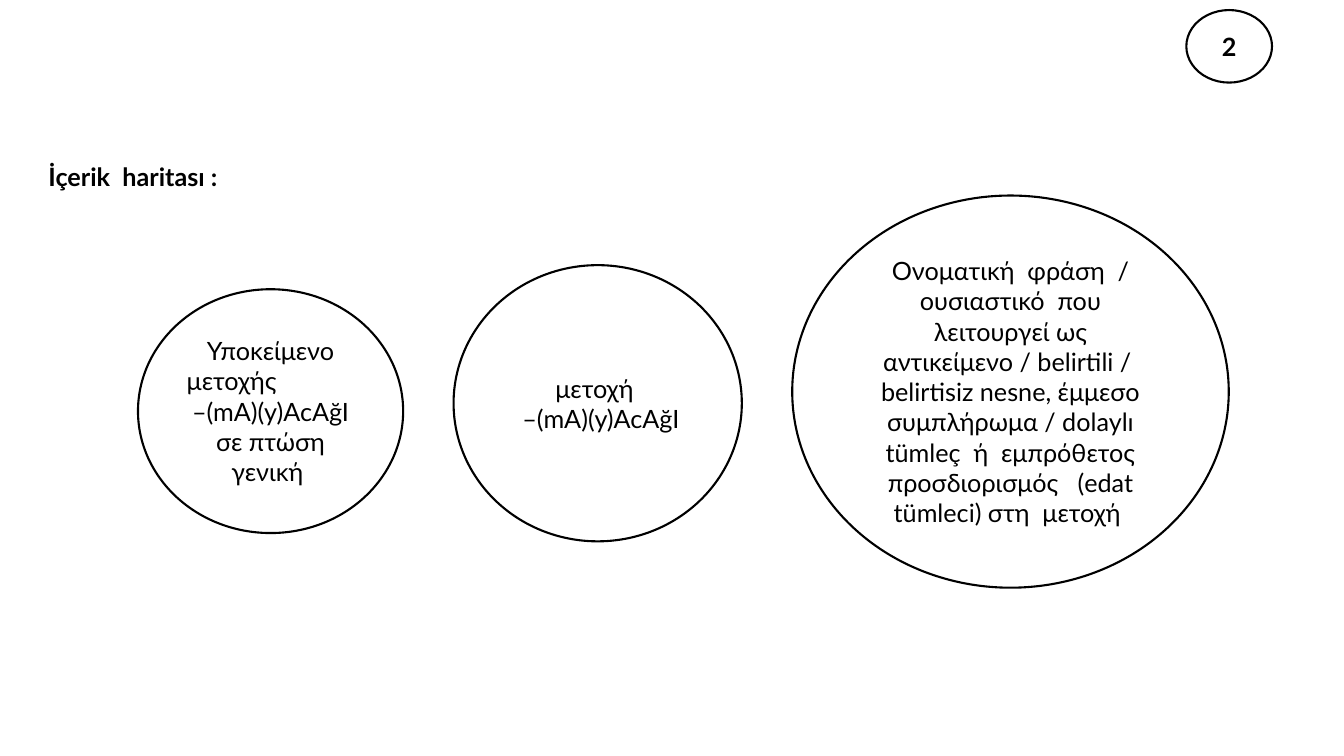
"""Build the content map slide: a heading, a numbered badge and a row of three ellipses."""
import pptx
import pptx.dml.color
import pptx.enum.shapes
import pptx.enum.text
import pptx.util

Pt = pptx.util.Pt
ALIGN = pptx.enum.text.PP_ALIGN
ANCHOR = pptx.enum.text.MSO_ANCHOR

SLIDE_SIZE = (960, 540)
BLACK, WHITE = "000000", "FFFFFF"
HEADING = "İçerik  haritası :"
HEADING_BOX = (27.4, 111.6, 734.4, 28.8)
BADGE = "2"
BADGE_BOX = (847.4, 7.2, 61.2, 51.8)
ROW_LEFT, ROW_GAP = 98.6, 36
ELLIPSES = [
    {"top": 206.6, "size": (189.4, 174.2), "lines": [
        ("Υποκείμενο", ALIGN.CENTER),
        ("μετοχής", ALIGN.LEFT),
        ("–(mA)(y)AcAğI σε πτώση γενική ", ALIGN.CENTER)]},
    {"top": 189.4, "size": (205.9, 197.3), "lines": [
        ("μετοχή ", ALIGN.CENTER),
        (" –(mA)(y)AcAğI", ALIGN.CENTER)]},
    {"top": 139.7, "size": (311.8, 280.1), "lines": [
        ("Ονοματική  φράση  / ουσιαστικό  που λειτουργεί ως αντικείμενο / belirtili /  "
         "belirtisiz nesne, έμμεσο συμπλήρωμα / dolaylı tümleç  ή  εμπρόθετος "
         "προσδιορισμός   (edat tümleci) στη  μετοχή ", ALIGN.CENTER)]},
]


def color(value):
    return pptx.dml.color.RGBColor.from_string(value)


def set_attributes(target, values):
    for name, value in values.items():
        setattr(target, name, value)


def write(shape, lines, anchor, bold):
    frame = shape.text_frame
    frame.text = "\n".join(text for text, _ in lines)
    set_attributes(frame, {"word_wrap": True, "vertical_anchor": anchor,
                           "auto_size": pptx.enum.text.MSO_AUTO_SIZE.NONE})
    for paragraph, (_, alignment) in zip(frame.paragraphs, lines):
        paragraph.alignment = alignment
        font = paragraph.runs[0].font
        set_attributes(font, {"name": "Lato", "size": Pt(18), "bold": bold})
        font.color.rgb = color(BLACK)


def add_ellipse(slide, box, lines, bold=False):
    shape = slide.shapes.add_shape(pptx.enum.shapes.MSO_SHAPE.OVAL, *map(Pt, box))
    shape.shadow.inherit = False
    shape.fill.solid()
    shape.fill.fore_color.rgb = color(WHITE)
    shape.line.color.rgb = color(BLACK)
    shape.line.width = Pt(1.5)
    write(shape, lines, ANCHOR.MIDDLE, bold)


def main():
    presentation = pptx.Presentation()
    width, height = map(Pt, SLIDE_SIZE)
    set_attributes(presentation, {"slide_width": width, "slide_height": height})
    slide = presentation.slides.add_slide(presentation.slide_layouts[5])

    title = slide.shapes.title
    set_attributes(title, dict(zip(("left", "top", "width", "height"), map(Pt, HEADING_BOX))))
    write(title, [(HEADING, ALIGN.LEFT)], ANCHOR.TOP, True)

    left = ROW_LEFT
    for ellipse in ELLIPSES:
        add_ellipse(slide, (left, ellipse["top"], *ellipse["size"]), ellipse["lines"])
        left += ellipse["size"][0] + ROW_GAP
    add_ellipse(slide, BADGE_BOX, [(BADGE, ALIGN.CENTER)], bold=True)

    presentation.save("out.pptx")


if __name__ == "__main__":
    main()
